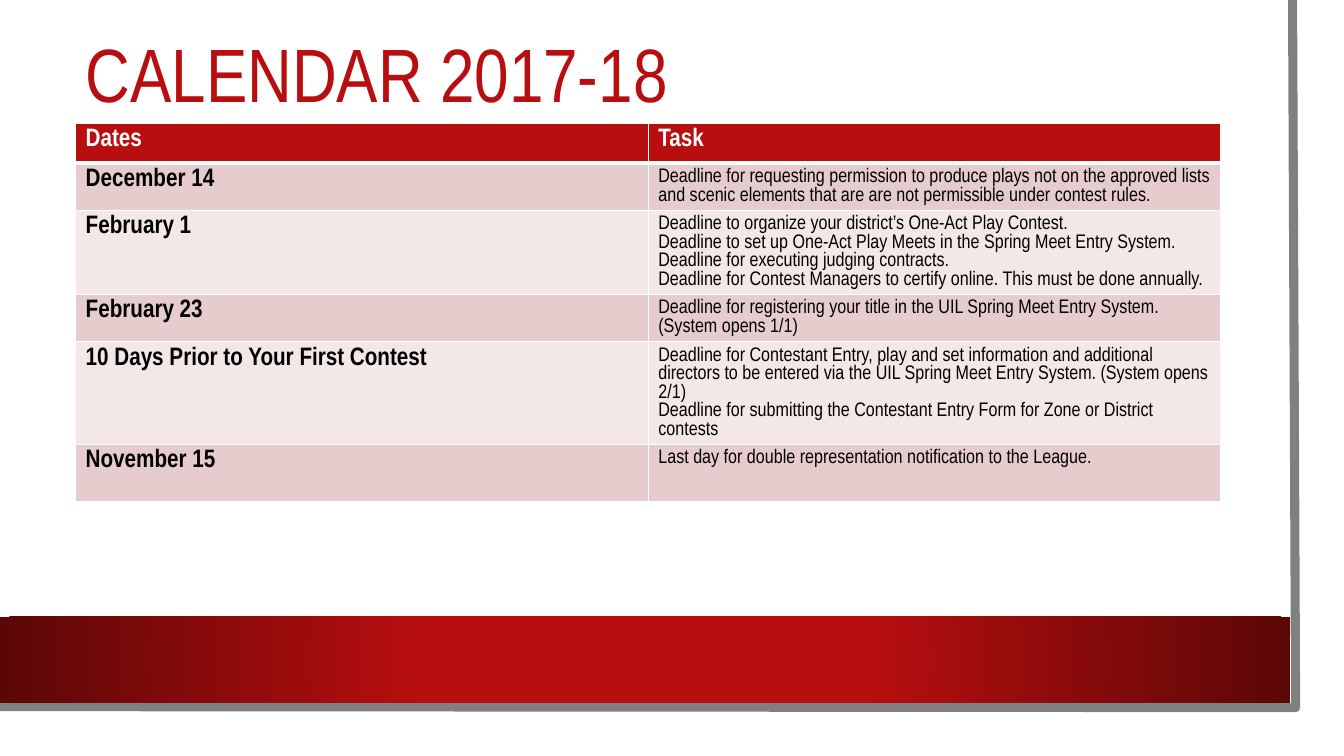
from lxml import etree
from pptx import Presentation
from pptx.dml.color import RGBColor
from pptx.enum import shapes, text
from pptx.oxml import parse_xml
from pptx.oxml.ns import nsdecls
from pptx.util import Inches, Pt

RED = RGBColor(0xB8, 0x0E, 0x0F)
DARK_RED = RGBColor(0x5C, 0x07, 0x07)
PINK = RGBColor(0xE6, 0xCC, 0xCC)
PALE = RGBColor(0xF3, 0xE7, 0xE7)
GREY = RGBColor(0x80, 0x80, 0x80)
WHITE = RGBColor(0xFF, 0xFF, 0xFF)
BLACK = RGBColor(0, 0, 0)
FONT = "Arial Narrow"

HEADER = ("Dates", ["Task"])
CALENDAR = [
    ("December 14", [
        "Deadline for requesting permission to produce plays not on the approved "
        "lists and scenic elements that are are not permissible under contest rules."]),
    ("February 1", [
        "Deadline to organize your district’s One-Act Play Contest.",
        "Deadline to set up One-Act Play Meets in the Spring Meet Entry System.",
        "Deadline for executing judging contracts.",
        "Deadline for Contest Managers to certify online. This must be done annually."]),
    ("February 23", [
        "Deadline for registering your title in the UIL Spring Meet Entry System. "
        "(System opens 1/1)"]),
    ("10 Days Prior to Your First Contest", [
        "Deadline for Contestant Entry, play and set information and additional "
        "directors to be entered via the UIL Spring Meet Entry System. "
        "(System opens 2/1)",
        "Deadline for submitting the Contestant Entry Form for Zone or District contests"]),
    ("November 15", ["Last day for double representation notification to the League."]),
]
ROW_HEIGHTS = [0.4, 0.46, 0.83, 0.47, 1.02, 0.57]

DATE_STYLE = {"size": Pt(18), "bold": True}
TASK_STYLE = {"size": Pt(14), "bold": False}


def style_font(font, color, **values):
    font.name = FONT
    font.color.rgb = color
    for name, value in values.items():
        setattr(font, name, value)


def add_panel(slide, x, y, w, h):
    sp = slide.shapes.add_shape(shapes.MSO_SHAPE.RECTANGLE,
                                Inches(x), Inches(y), Inches(w), Inches(h))
    sp.shadow.inherit = False
    sp.line.fill.background()
    sp.fill.solid()
    sp.fill.fore_color.rgb = WHITE
    return sp


def fill_radial(sp, inner, outer, start):
    """Fade from inner to outer, beginning at start percent from the centre."""
    solid = sp._element.spPr.find("{*}solidFill")
    gradient = parse_xml(
        f'<a:gradFill {nsdecls("a")} rotWithShape="1"><a:gsLst>'
        f'<a:gs pos="{start * 1000}"><a:srgbClr val="{inner}"/></a:gs>'
        f'<a:gs pos="100000"><a:srgbClr val="{outer}"/></a:gs></a:gsLst>'
        '<a:path path="circle"><a:fillToRect l="50000" t="50000" r="50000" b="50000"/>'
        '</a:path></a:gradFill>')
    solid.getparent().replace(solid, gradient)


def add_edge(slide, points):
    start, *rest = [(Inches(x), Inches(y)) for x, y in points]
    builder = slide.shapes.build_freeform(*start, scale=1.0)
    builder.add_line_segments(rest, close=False)
    sp = builder.convert_to_shape()
    sp.shadow.inherit = False
    sp.fill.background()
    sp.line.color.rgb = GREY
    sp.line.width = Pt(6.5)


def add_title(slide, words):
    title = slide.shapes.title
    slide.shapes._spTree.append(title._element)  # bring in front of the background
    title.left, title.top = Inches(0.75), Inches(0.14)
    title.width, title.height = Inches(11.37), Inches(1.26)
    tf = title.text_frame
    tf.text = words
    tf.auto_size = text.MSO_AUTO_SIZE.NONE
    tf.vertical_anchor = text.MSO_ANCHOR.MIDDLE
    p = tf.paragraphs[0]
    p.alignment = text.PP_ALIGN.LEFT
    p.line_spacing = 0.9
    style_font(p.runs[0].font, RED, size=Pt(54))


def set_borders(cell, **widths):
    tcPr = cell._tc.get_or_add_tcPr()
    for side in "LRTB":
        width = Pt(widths.get(side, 1))
        line = parse_xml(
            f'<a:ln{side} {nsdecls("a")} w="{width}"><a:solidFill>'
            f'<a:srgbClr val="{WHITE}"/></a:solidFill></a:ln{side}>')
        tcPr.append(line)


def fill_cell(cell, lines, fill, color, style, **borders):
    set_borders(cell, **borders)
    cell.fill.solid()
    cell.fill.fore_color.rgb = fill
    tf = cell.text_frame
    for i, line in enumerate(lines):
        p = tf.add_paragraph() if i else tf.paragraphs[0]
        r = p.add_run()
        r.text = line
        style_font(r.font, color, **style)


def add_calendar(slide):
    rows = [HEADER] + CALENDAR
    frame = slide.shapes.add_table(len(rows), 2, Inches(0.75), Inches(1.22),
                                   Inches(11.36), Inches(sum(ROW_HEIGHTS)))
    table = frame.table
    for i, (date, tasks) in enumerate(rows):
        table.rows[i].height = Inches(ROW_HEIGHTS[i])
        date_cell, task_cell = table.rows[i].cells
        if i == 0:
            look = {"fill": RED, "color": WHITE, "B": 3}
        else:
            look = {"fill": PINK if i % 2 else PALE, "color": BLACK}
            if i == 1:
                look["T"] = 3
        fill_cell(date_cell, [date], style=DATE_STYLE, **look)
        fill_cell(task_cell, tasks, style=TASK_STYLE if i else DATE_STYLE, **look)


def main():
    prs = Presentation()
    prs.slide_width, prs.slide_height = Inches(13.33), Inches(7.5)
    slide = prs.slides.add_slide(prs.slide_layouts[5])
    add_panel(slide, 0, 0, 13.1, 7.27)
    add_edge(slide, [(12.82, 0), (12.85, 7.02), (-0.03, 7.01)])
    band = add_panel(slide, 0, 6.12, 12.8, 0.85)
    fill_radial(band, RED, DARK_RED, 34)
    add_title(slide, "CALENDAR 2017-18")
    add_calendar(slide)
    prs.save("out.pptx")


if __name__ == "__main__":
    main()
